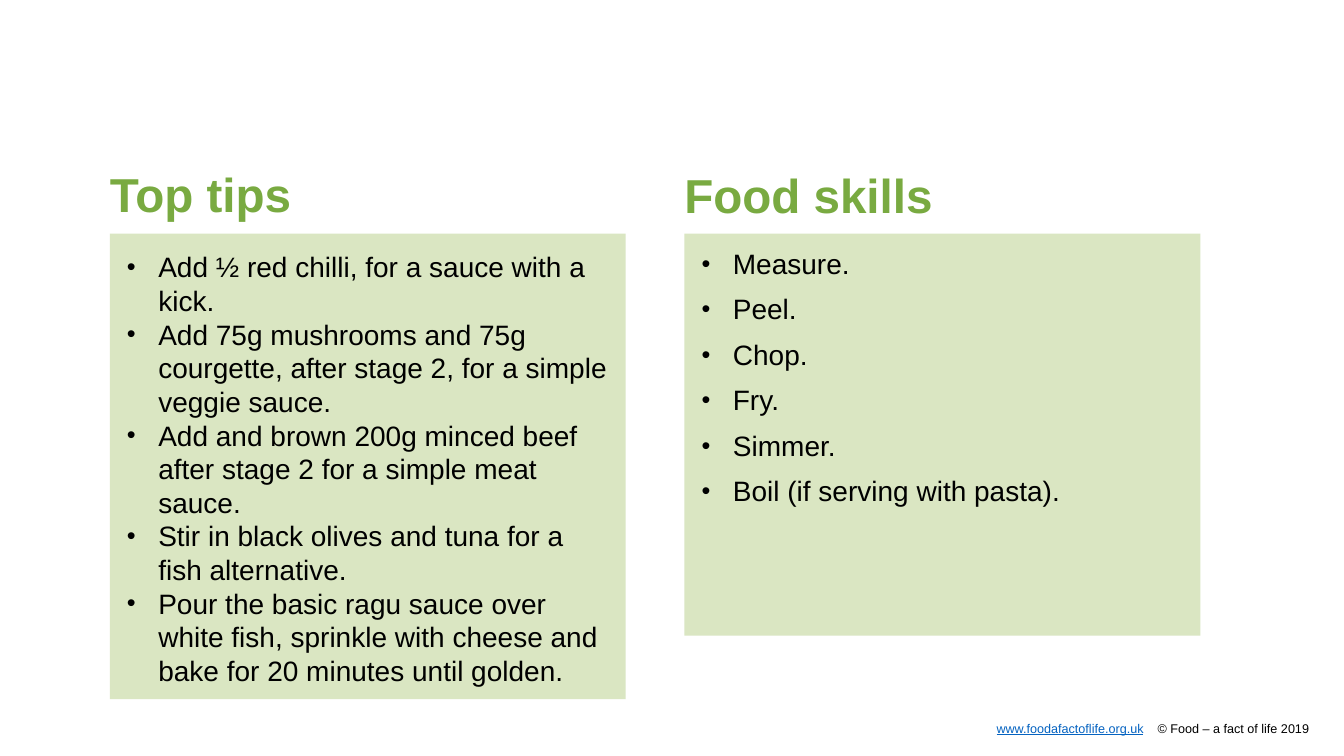
from dataclasses import dataclass

import pptx
import pptx.dml.color
import pptx.enum.shapes
import pptx.enum.text
import pptx.oxml
import pptx.oxml.ns
import pptx.util
from pptx.util import Cm

FONT = "Arial"
PANEL_GREEN = "DAE6C2"
HEADING_GREEN = "79AA41"
BLACK = "000000"
LINK_BLUE = "0563C1"

PANEL_TOP = 5.89
PANEL_WIDTH = 13
PADDING = 0.43
HANGING = 0.79


@dataclass
class Column:
    heading: str
    heading_top: float
    left: float
    panel_height: float
    line_spacing: float | pptx.util.Length
    space_before: float
    items: list[str]


COLUMNS = [
    Column("Top tips", 4.32, 2.77, 11.73, pptx.util.Pt(24), 0, [
        "Add ½ red chilli, for a sauce with a kick.",
        "Add 75g mushrooms and 75g courgette, after stage 2, for a simple veggie sauce.",
        "Add and brown 200g minced beef after stage 2 for a simple meat sauce.",
        "Stir in black olives and tuna for a fish alternative.",
        "Pour the basic ragu sauce over white fish, sprinkle with cheese and "
        "bake for 20 minutes until golden.",
    ]),
    Column("Food skills", 4.34, 17.25, 10.13, 0.9, 10.9, [
        "Measure.", "Peel.", "Chop.", "Fry.", "Simmer.",
        "Boil (if serving with pasta).",
    ]),
]


def color(value: str) -> pptx.dml.color.RGBColor:
    return pptx.dml.color.RGBColor.from_string(value)


def set_font(font, size: float, value: str, bold: bool = False) -> None:
    font.name = FONT
    font.size = pptx.util.Pt(size)
    font.bold = bold
    font.color.rgb = color(value)


def place(box, left: float, top: float, width: float, height: float) -> None:
    box.left, box.top = Cm(left), Cm(top)
    box.width, box.height = Cm(width), Cm(height)


def prepare_frame(box):
    frame = box.text_frame
    frame.margin_left = frame.margin_right = 0
    frame.margin_top = frame.margin_bottom = 0
    frame.word_wrap = True
    frame.auto_size = pptx.enum.text.MSO_AUTO_SIZE.NONE
    frame.vertical_anchor = pptx.enum.text.MSO_ANCHOR.TOP
    return frame


def add_text_box(page, left: float, top: float, width: float, height: float):
    return page.shapes.add_textbox(Cm(left), Cm(top), Cm(width), Cm(height))


def add_bullet(para) -> None:
    properties = para._p.get_or_add_pPr()
    properties.set("marL", str(Cm(HANGING)))
    properties.set("indent", str(-Cm(HANGING)))
    for tag, name, value in (
        ("buSzPct", "val", "90000"),
        ("buFont", "typeface", FONT),
        ("buChar", "char", "•"),
    ):
        element = pptx.oxml.parse_xml(
            f'<a:{tag} {pptx.oxml.ns.nsdecls("a")} {name}="{value}"/>')
        properties.append(element)


def draw_panel(page, column: Column) -> None:
    panel = page.shapes.add_shape(
        pptx.enum.shapes.MSO_SHAPE.RECTANGLE,
        Cm(column.left), Cm(PANEL_TOP), Cm(PANEL_WIDTH), Cm(column.panel_height))
    panel.shadow.inherit = False
    panel.fill.solid()
    panel.fill.fore_color.rgb = color(PANEL_GREEN)
    panel.line.fill.background()


def draw_heading(box, column: Column) -> None:
    place(box, column.left, column.heading_top, 27, 2)
    para = prepare_frame(box).paragraphs[0]
    para.text = column.heading
    para.alignment = pptx.enum.text.PP_ALIGN.LEFT
    para.line_spacing = 0.9
    set_font(para.font, 34, HEADING_GREEN, bold=True)


def draw_items(page, column: Column) -> None:
    box = add_text_box(page, column.left + PADDING, PANEL_TOP + 0.41,
                       PANEL_WIDTH - 2 * PADDING, 10)
    frame = prepare_frame(box)
    for index, item in enumerate(column.items):
        para = frame.add_paragraph() if index else frame.paragraphs[0]
        para.text = item
        para.line_spacing = column.line_spacing
        para.space_before = pptx.util.Pt(column.space_before if index else 0)
        add_bullet(para)
        set_font(para.font, 20, BLACK)


def draw_footer(page) -> None:
    box = add_text_box(page, 3.2, 18.16, 29.79, 0.38)
    para = prepare_frame(box).paragraphs[0]
    para.alignment = pptx.enum.text.PP_ALIGN.RIGHT
    for text, value in (
        ("www.foodafactoflife.org.uk", LINK_BLUE),
        (" ", BLACK),
        ("© Food – a fact of life 2019", BLACK),
    ):
        span = para.add_run()
        span.text = text
        set_font(span.font, 9, value)
        span.font.underline = value == LINK_BLUE
        if text == " ":
            span.font._element.set("spc", "750")


def main() -> None:
    deck = pptx.Presentation()
    deck.slide_width, deck.slide_height = Cm(33.87), Cm(19.05)
    page = deck.slides.add_slide(deck.slide_layouts[5])
    draw_footer(page)
    for index, column in enumerate(COLUMNS):
        draw_panel(page, column)
        heading = add_text_box(page, 0, 0, 1, 1) if index else page.shapes.title
        draw_heading(heading, column)
        draw_items(page, column)
    deck.save("out.pptx")


if __name__ == "__main__":
    main()
